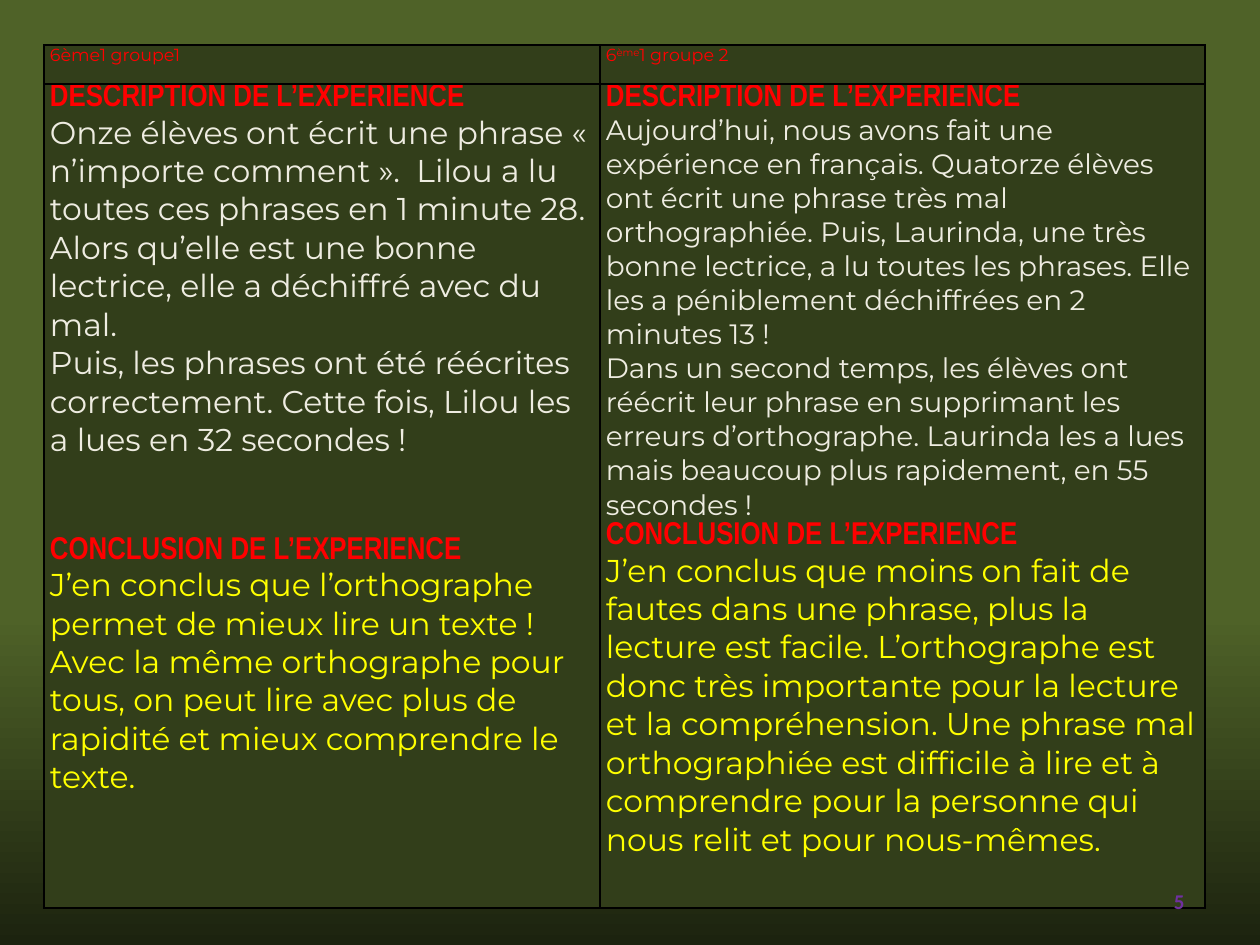
from lxml.etree import SubElement
from pptx import Presentation
from pptx.dml.color import RGBColor
from pptx.enum.text import MSO_ANCHOR, PP_ALIGN
from pptx.oxml.ns import qn
from pptx.util import Pt

SCALE = 7257
RED, CREAM, YELLOW = "FF0000", "EEECE1", "FFFF00"
HEADING = dict(size=18, font="Arial Narrow", color=RED, bold=True)
HEADER = dict(size=10, color=RED)
CONCLUSION = dict(size=18, color=YELLOW)

LEFT_TEXT = [
    ("DESCRIPTION DE L’EXPERIENCE", HEADING),
    ("Onze élèves ont écrit une phrase « n’importe comment ».  Lilou a lu toutes ces phrases "
     "en 1 minute 28. Alors qu’elle est une bonne lectrice, elle a déchiffré avec du mal.",
     dict(size=18, color=CREAM)),
    ("Puis, les phrases ont été réécrites correctement. Cette fois, Lilou les a lues "
     "en 32 secondes !", dict(size=18, color=CREAM)),
    ("CONCLUSION DE L’EXPERIENCE", dict(HEADING, before=44)),
    ("J’en conclus que l’orthographe permet de mieux lire un texte ! Avec la même orthographe "
     "pour tous, on peut lire avec plus de rapidité et mieux comprendre le texte.", CONCLUSION),
]
RIGHT_TEXT = [
    ("DESCRIPTION DE L’EXPERIENCE", HEADING),
    ("Aujourd’hui, nous avons fait une expérience en français. Quatorze élèves ont écrit une "
     "phrase très mal orthographiée. Puis, Laurinda, une très bonne lectrice, a lu toutes les "
     "phrases. Elle les a péniblement déchiffrées en 2 minutes 13 !",
     dict(size=16, color=CREAM)),
    ("Dans un second temps, les élèves ont réécrit leur phrase en supprimant les erreurs "
     "d’orthographe. Laurinda les a lues mais beaucoup plus rapidement, en 55 secondes !",
     dict(size=16, color=CREAM)),
    ("CONCLUSION DE L’EXPERIENCE", HEADING),
    ("J’en conclus que moins on fait de fautes dans une phrase, plus la lecture est facile. "
     "L’orthographe est donc très importante pour la lecture et la compréhension. Une phrase "
     "mal orthographiée est difficile à lire et à comprendre pour la personne qui nous relit "
     "et pour nous-mêmes.", CONCLUSION),
]


def px(n):
    return n * SCALE


def rgb(color):
    return RGBColor.from_string(color)


def add_text(p, text, size=18, font="Montserrat", color=CREAM, bold=False, before=0,
             align=PP_ALIGN.LEFT, baseline=0):
    p.alignment = align
    p.space_before = Pt(before)
    r = p.add_run()
    r.text = text
    r.font.size = Pt(size)
    r.font.name = font
    r.font.bold = bold
    r.font.color.rgb = rgb(color)
    if baseline:
        r.font._element.set("baseline", str(baseline * 1000))


def set_background(s):
    fill = s.background.fill
    fill.gradient()
    fill.gradient_angle = 270
    for stop, (position, color) in zip(fill.gradient_stops, [(0.65, "4F6228"), (1, "1C230F")]):
        stop.position = position
        stop.color.rgb = rgb(color)


def format_cell(cell):
    cell.margin_left = cell.margin_right = px(6)
    cell.margin_top = cell.margin_bottom = 0
    tc_pr = cell._tc.get_or_add_tcPr()
    for side in ("lnL", "lnR", "lnT", "lnB"):
        ln = SubElement(tc_pr, qn(f"a:{side}"), w=str(Pt(1)))
        solid = SubElement(ln, qn("a:solidFill"))
        SubElement(solid, qn("a:srgbClr"), val="000000")
    cell.fill.solid()
    cell.fill.fore_color.rgb = rgb("323E1A")


def fill_cell(cell, paragraphs):
    tf = cell.text_frame
    for i, (text, style) in enumerate(paragraphs):
        p = tf.add_paragraph() if i else tf.paragraphs[0]
        add_text(p, text, **style)


def add_report_table(s):
    widths, heights = (556, 605), (39, 824)
    table = s.shapes.add_table(2, 2, px(44), px(45), px(sum(widths)), px(sum(heights))).table
    for column, width in zip(table.columns, widths):
        column.width = px(width)
    for row, height in zip(table.rows, heights):
        row.height = px(height)
    for cell in table.iter_cells():
        format_cell(cell)
    fill_cell(table.cell(0, 0), [("6ème1 groupe1", HEADER)])
    p = table.cell(0, 1).text_frame.paragraphs[0]
    for text, baseline in (("6", 0), ("ème", 30), ("1 groupe 2", 0)):
        add_text(p, text, baseline=baseline, **HEADER)
    fill_cell(table.cell(1, 0), LEFT_TEXT)
    fill_cell(table.cell(1, 1), RIGHT_TEXT)


def add_page_number(s, number):
    sp = s.shapes.add_textbox(px(903), px(876), px(294), px(50))
    tf = sp.text_frame
    tf.word_wrap = True
    tf.vertical_anchor = MSO_ANCHOR.MIDDLE
    add_text(tf.paragraphs[0], number, size=12, font="Calibri", color="7030A0", bold=True,
             align=PP_ALIGN.RIGHT)


def main():
    prs = Presentation()
    prs.slide_width, prs.slide_height = px(1260), px(945)
    s = prs.slides.add_slide(prs.slide_layouts[6])
    set_background(s)
    add_report_table(s)
    add_page_number(s, "5")
    prs.save("out.pptx")


if __name__ == "__main__":
    main()
